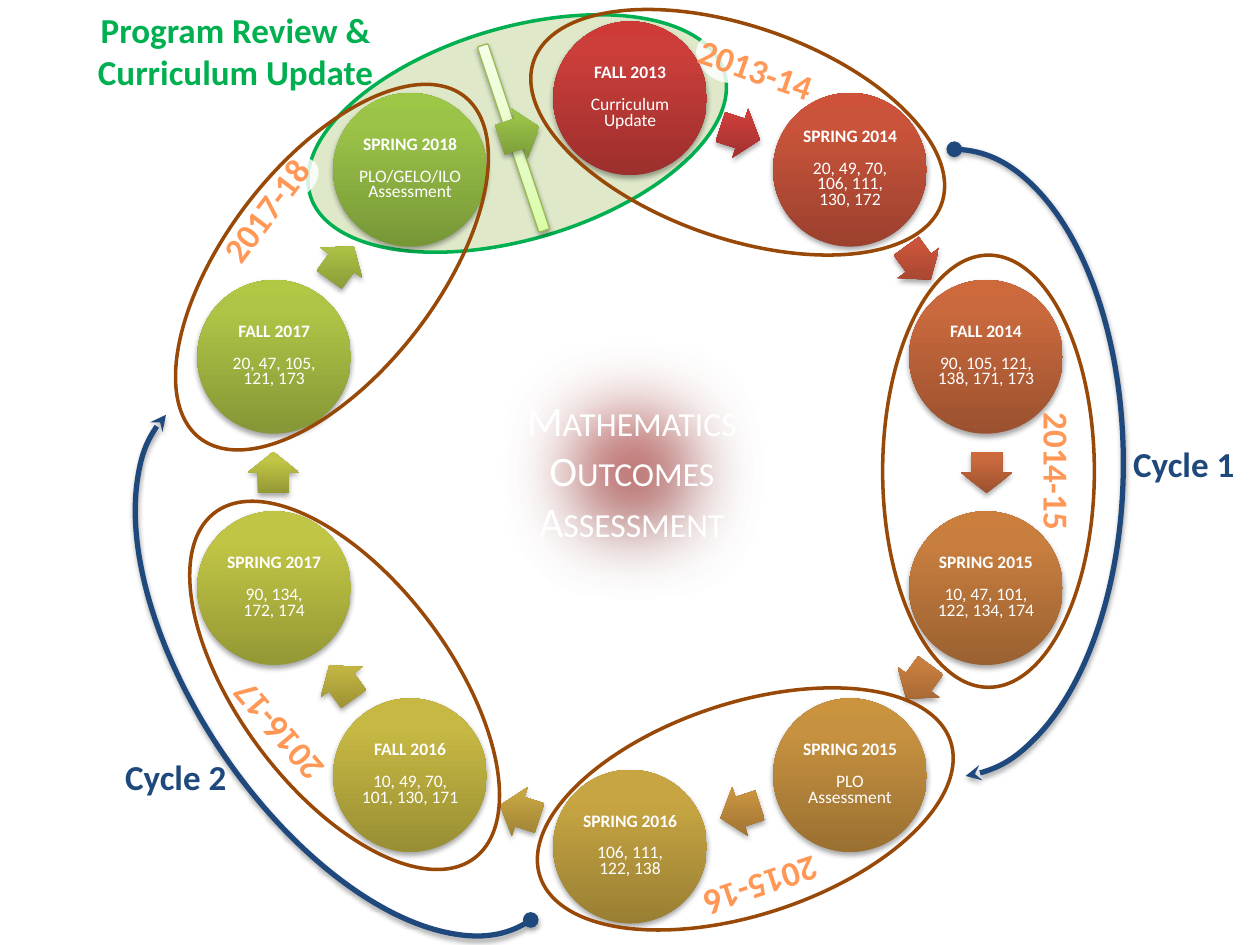
from collections import namedtuple
from math import cos, radians, sin

from pptx import Presentation
from pptx.dml.color import RGBColor
from pptx.enum.shapes import MSO_SHAPE
from pptx.enum.text import MSO_ANCHOR, MSO_AUTO_SIZE, PP_ALIGN
from pptx.oxml import parse_xml
from pptx.oxml.ns import nsdecls, qn
from pptx.util import Inches, Pt

Box = namedtuple("Box", "left top width height")

WHITE = RGBColor(0xFF, 0xFF, 0xFF)
GREEN = RGBColor(0x00, 0xB0, 0x50)
PALE_GREEN = RGBColor(0xD7, 0xE4, 0xBD)
BAR_LINE = RGBColor(0x98, 0xB9, 0x55)
ORANGE = RGBColor(0xFF, 0x98, 0x56)
BROWN = RGBColor(0x98, 0x48, 0x07)
NAVY = RGBColor(0x1F, 0x49, 0x7D)
BAR_STOPS = [(0, RGBColor(0xDA, 0xFD, 0xA7)), (35, RGBColor(0xE4, 0xFC, 0xC2)),
             (100, RGBColor(0xF5, 0xFF, 0xE7))]
RED_SHADES = (RGBColor(0x9C, 0x2F, 0x2D), RGBColor(0xCB, 0x3E, 0x3A), RGBColor(0xCE, 0x3B, 0x37))

TERMS = [
    ("FALL 2013", ["Curriculum Update"], RED_SHADES),
    ("SPRING 2014", ["20, 49, 70, 106, 111,", "130, 172"],
     (RGBColor(0x9B, 0x41, 0x2E), RGBColor(0xCA, 0x54, 0x3B), RGBColor(0xCE, 0x52, 0x39))),
    ("FALL 2014", ["90, 105, 121, 138, 171, 173"],
     (RGBColor(0x9B, 0x51, 0x2F), RGBColor(0xC9, 0x69, 0x3D), RGBColor(0xCD, 0x69, 0x3B))),
    ("SPRING 2015", ["10, 47, 101, 122, 134, 174"],
     (RGBColor(0x9A, 0x61, 0x30), RGBColor(0xC8, 0x7E, 0x3F), RGBColor(0xCC, 0x7E, 0x3C))),
    ("SPRING 2015", ["PLO Assessment"],
     (RGBColor(0x9A, 0x70, 0x31), RGBColor(0xC7, 0x92, 0x40), RGBColor(0xCB, 0x93, 0x3E))),
    ("SPRING 2016", ["106, 111,", "122, 138"],
     (RGBColor(0x99, 0x7F, 0x33), RGBColor(0xC7, 0xA5, 0x42), RGBColor(0xCA, 0xA7, 0x40))),
    ("FALL 2016", ["10, 49, 70, 101, 130, 171"],
     (RGBColor(0x98, 0x8E, 0x34), RGBColor(0xC6, 0xB8, 0x43), RGBColor(0xC9, 0xBB, 0x41))),
    ("SPRING 2017", ["90, 134,", "172, 174"],
     (RGBColor(0x94, 0x98, 0x35), RGBColor(0xC0, 0xC5, 0x45), RGBColor(0xC3, 0xC8, 0x43))),
    ("FALL 2017", ["20, 47, 105, 121, 173"],
     (RGBColor(0x85, 0x97, 0x36), RGBColor(0xAD, 0xC4, 0x46), RGBColor(0xB0, 0xC8, 0x44))),
    ("SPRING 2018", ["PLO/GELO/ILO Assessment"],
     (RGBColor(0x77, 0x97, 0x37), RGBColor(0x9B, 0xC3, 0x48), RGBColor(0x9D, 0xC7, 0x46))),
]
YEARS = [
    ("2013-14", (5.43, 0.33), 19.3, (4.14, 0.21), 19.3),
    ("2014-15", (7.82, 3.52), 90, (6.13, 2.9), 90),
    ("2015-16", (5.47, 6.82), 161.6, (4.2, 5.58), 341.8),
    ("2016-17", (1.63, 5.59), 229.5, (1.02, 4.6), 53.1),
    ("2017-18", (1.54, 1.45), 307.1, (0.92, 1.28), 307.7),
]


def add_preset(slide, kind, box, rotation=0, fill=None, line=None, width=2):
    """Add a preset shape without shadow, with an optional plain fill and line."""
    shape = slide.shapes.add_shape(kind, *map(Inches, box))
    shape.rotation = rotation
    shape.shadow.inherit = False
    if fill is None:
        shape.fill.background()
    else:
        shape.fill.solid()
        shape.fill.fore_color.rgb = fill
    if line is None:
        shape.line.fill.background()
    else:
        shape.line.color.rgb = line
        shape.line.width = Pt(width)
    return shape


def set_opacity(shape, percent):
    """Make the plain fill of a shape partly transparent."""
    color = shape._element.spPr.find(qn("a:solidFill"))[0]
    color.append(parse_xml(f'<a:alpha {nsdecls("a")} val="{percent * 1000}"/>'))


def set_gradient(shape, stops):
    """Fill an unfilled shape with a gradient rising from bottom to top."""
    marks = "".join(f'<a:gs pos="{pos * 1000}"><a:srgbClr val="{color}"/></a:gs>'
                    for pos, color in stops)
    properties = shape._element.spPr
    properties.replace(properties.find(qn("a:noFill")), parse_xml(
        f'<a:gradFill {nsdecls("a")} rotWithShape="0"><a:gsLst>{marks}</a:gsLst>'
        '<a:lin ang="16200000" scaled="0"/></a:gradFill>'))


def add_shadow(shape, blur=3.1, distance=1.7, angle=90, opacity=35):
    """Give a shape a soft black outer shadow."""
    shape._element.spPr.find(qn("a:effectLst")).append(parse_xml(
        f'<a:outerShdw {nsdecls("a")} blurRad="{Pt(blur)}" dist="{Pt(distance)}" '
        f'dir="{angle * 60000}" rotWithShape="0"><a:srgbClr val="000000">'
        f'<a:alpha val="{opacity * 1000}"/></a:srgbClr></a:outerShdw>'))


def write_lines(frame, lines, size, color, bold=False):
    """Write centred Calibri lines, one paragraph each, and return the paragraphs."""
    paragraphs = []
    for index, line in enumerate(lines):
        paragraph = frame.add_paragraph() if index else frame.paragraphs[0]
        paragraph.alignment = PP_ALIGN.CENTER
        run = paragraph.add_run()
        run.text = line
        run.font.name = "Calibri"
        run.font.size = Pt(size)
        run.font.bold = bold
        run.font.color.rgb = color
        paragraphs.append(paragraph)
    return paragraphs


def add_label(slide, box, lines, color, rotation=0):
    """Add a bold unwrapped label."""
    label = slide.shapes.add_textbox(*map(Inches, box))
    label.rotation = rotation
    label.text_frame.word_wrap = False
    label.text_frame.auto_size = MSO_AUTO_SIZE.SHAPE_TO_FIT_TEXT
    write_lines(label.text_frame, lines, 20, color, bold=True)


def add_review(slide, box):
    """Place the program review oval, its divider bar and its heading."""
    left, top = box.left, box.top
    oval = add_preset(slide, MSO_SHAPE.OVAL, Box(left + 1.72, top + 0.2, 3.43, 1.68),
                      343.4, PALE_GREEN, GREEN)
    set_opacity(oval, 80)
    for gap, rotation in [(Box(left + 4.84, top + 0.27, 0.46, 0.35), 33.5),
                          (Box(left + 1.51, top + 1.26, 0.37, 0.27), 317.4)]:
        set_opacity(add_preset(slide, MSO_SHAPE.OVAL, gap, rotation, WHITE), 83)
    divider = add_preset(slide, MSO_SHAPE.ROUNDED_RECTANGLE,
                         Box(left + 3.36, top + 0.3, 0.09, 1.55), 341.6, line=BAR_LINE, width=0.75)
    set_gradient(divider, BAR_STOPS)
    add_shadow(divider)
    add_label(slide, Box(left, top, 2.4, 0.77), ["Program Review &", "Curriculum Update"], GREEN)


def add_ring(slide, box):
    """Place the term circles and the arrows between them around the box centre."""
    diameter, step = 1.22, 360 / len(TERMS)
    orbit = (box.width - diameter) / 2

    def around(angle, radius, width, height):
        """Return a box centred at a clockwise angle from the top."""
        return Box(box.left + box.width / 2 + radius * sin(radians(angle)) - width / 2,
                   box.top + box.height / 2 - radius * cos(radians(angle)) - height / 2,
                   width, height)

    for index, (term, courses, shades) in enumerate(TERMS):
        stops = list(zip((0, 80, 100), shades))
        circle = add_preset(slide, MSO_SHAPE.OVAL, around(index * step, orbit, diameter, diameter))
        frame = circle.text_frame
        frame.margin_left = frame.margin_right = Inches(0.01)
        frame.margin_top = frame.margin_bottom = Inches(0.01)
        frame.vertical_anchor = MSO_ANCHOR.MIDDLE
        paragraphs = write_lines(frame, [term, *courses], 10, WHITE)
        paragraphs[0].runs[0].font.bold = True
        paragraphs[1].space_before = Pt(9)
        for paragraph in paragraphs:
            paragraph.line_spacing = Pt(9)
        angle = (index + 0.5) * step
        arrow = add_preset(slide, MSO_SHAPE.RIGHT_ARROW, around(angle, 2.83, 0.33, 0.41), angle)
        arrow.adjustments[0] = 0.6
        for part in (circle, arrow):
            set_gradient(part, stops)
            add_shadow(part)


def add_hub(slide, box):
    """Place the soft-edged hub with the slide title on it."""
    hub = add_preset(slide, MSO_SHAPE.OVAL, box)
    set_gradient(hub, list(zip((0, 80, 100), RED_SHADES)))
    add_shadow(hub, 4, 3, 45, 40)
    hub._element.spPr.find(qn("a:effectLst")).append(
        parse_xml(f'<a:softEdge {nsdecls("a")} rad="{Pt(50)}"/>'))
    title = slide.shapes.title
    title.left, title.top, title.width, title.height = map(Inches, box)
    frame = title.text_frame
    frame.auto_size = MSO_AUTO_SIZE.NONE
    frame.word_wrap = True
    frame.vertical_anchor = MSO_ANCHOR.MIDDLE
    for paragraph in write_lines(frame, ["Mathematics", "Outcomes", "Assessment"], 24, WHITE):
        paragraph.runs[0].font._element.set("cap", "small")
    slide.shapes._spTree.append(title._element)


def add_years(slide, box):
    """Place the academic year labels and the ovals that group their terms."""
    for year, (x, y), turn, _, _ in YEARS:
        add_label(slide, Box(box.left + x, box.top + y, 1.14, 0.44), [year], ORANGE, turn)
    for _, _, _, (x, y), turn in YEARS:
        add_preset(slide, MSO_SHAPE.OVAL, Box(box.left + x, box.top + y, 3.43, 1.68),
                   turn, line=BROWN)


def add_cycle(slide, box, rotation, angles, name, name_box):
    """Place one cycle arc, with its arrowhead and round end, and its label."""
    add_label(slide, name_box, [name], NAVY)
    arc = add_preset(slide, MSO_SHAPE.ARC, box, rotation, line=NAVY, width=3)
    arc.adjustments[0], arc.adjustments[1] = angles
    arc._element.spPr.find(qn("a:xfrm")).set("flipV", "1")
    for end, kind in (("headEnd", "stealth"), ("tailEnd", "oval")):
        arc._element.spPr.find(qn("a:ln")).append(
            parse_xml(f'<a:{end} {nsdecls("a")} type="{kind}"/>'))
    add_shadow(arc)


def main():
    """Build the assessment cycle slide."""
    deck = Presentation()
    deck.slide_width, deck.slide_height = Inches(10), Inches(7.5)
    slide = deck.slides.add_slide(deck.slide_layouts[5])
    add_review(slide, Box(0.67, 0.02, 5.3, 2))
    add_ring(slide, Box(1.42, 0.17, 7.16, 7.16))
    add_hub(slide, Box(3.69, 2.42, 2.65, 2.62))
    add_years(slide, Box(0, 0, 10, 7.5))
    add_cycle(slide, Box(5.08, 2.33, 4.98, 2.69), 270, (109.29, 215.95),
              "Cycle 1", Box(8.89, 3.46, 1.01, 0.44))
    add_cycle(slide, Box(0.34, 3.97, 4.96, 2.56), 56, (110.1, 0.1),
              "Cycle 2", Box(0.89, 5.95, 1.01, 0.44))
    deck.save("out.pptx")


if __name__ == "__main__":
    main()
